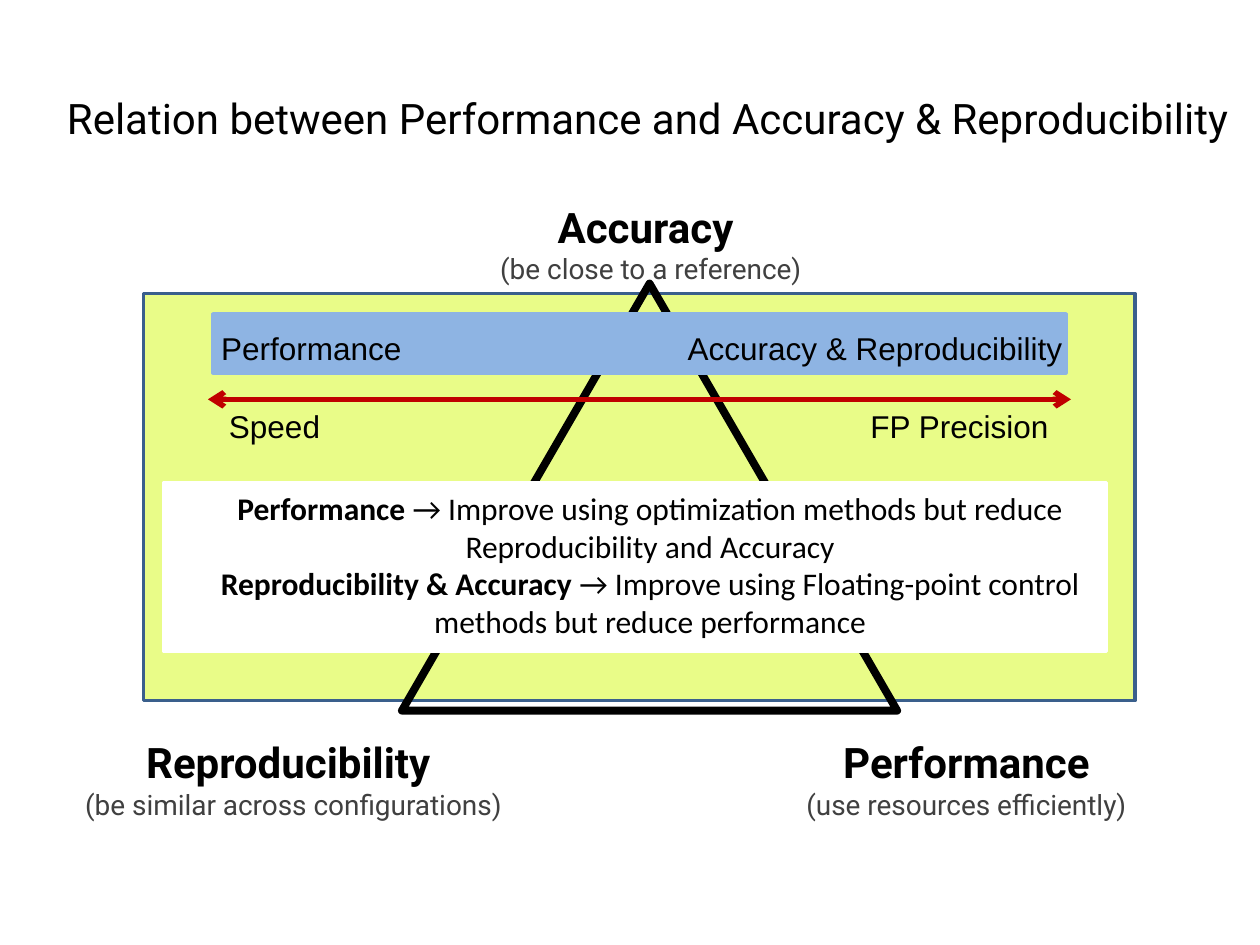
from lxml.etree import SubElement
from pptx import Presentation
from pptx.dml.color import RGBColor
from pptx.enum.shapes import MSO_CONNECTOR as Connector, MSO_SHAPE as Shape
from pptx.enum.text import MSO_ANCHOR as Anchor, PP_ALIGN as Align
from pptx.oxml.ns import qn
from pptx.util import Pt

COLORS = {"ink": "000000", "note": "404040", "white": "FFFFFF", "lime": "E9FC88",
          "frame": "3A5F8C", "bar": "8EB4E3", "arrow": "C00000"}

TITLE = "Relation between Performance and Accuracy & Reproducibility"
CORNERS = [
    ("Accuracy ", "(be close to a reference)", (259.9, 111.6, 223.9, 54.7)),
    ("Reproducibility ", "(be similar across configurations)", (3.6, 417.6, 328.3, 54.7)),
    ("Performance", "(use resources efficiently)", (388.1, 417.6, 328.3, 76.3)),
]
SCALE_ENDS = [("FP Precision", (490.3, 229, 120, 28.8)),
              ("Speed", (123.8, 229, 72, 28.8))]
TRADEOFFS = [
    [("Performance", True),
     (" → Improve using optimization methods but reduce Reproducibility and Accuracy", False)],
    [("Reproducibility & Accuracy ", True),
     ("→ Improve using Floating-point control methods but reduce performance", False)],
]
BAR_LABELS = "Performance\tAccuracy & Reproducibility"
BACKDROPS = [
    (Shape.RECTANGLE, (82.1, 167.8, 566.6, 232.6), "lime", "frame", 2),
    (Shape.ISOSCELES_TRIANGLE, (229.7, 162, 283, 244.1), None, "ink", 4.5),
    (Shape.RECTANGLE, (93.6, 275.8, 538.6, 96.5), "white", "white", 2),
]
BAR = (Shape.RECTANGLE, (121.7, 179.3, 487.4, 33.8), "bar", "bar", 2)


def rgb(name):
    return RGBColor.from_string(COLORS[name])


def add_panel(slide, kind, box, fill, outline, width):
    panel = slide.shapes.add_shape(kind, *map(Pt, box))
    panel.shadow.inherit = False
    if fill:
        panel.fill.solid()
        panel.fill.fore_color.rgb = rgb(fill)
    else:
        panel.fill.background()
    panel.line.color.rgb = rgb(outline)
    panel.line.width = Pt(width)


def write(frame, paragraphs, *, font, size=18, align=Align.LEFT, wrap=True):
    """Fill a text frame with paragraphs of (text, bold[, size, color]) runs."""
    frame.word_wrap = wrap
    frame.vertical_anchor = Anchor.TOP
    for index, runs in enumerate(paragraphs):
        paragraph = frame.add_paragraph() if index else frame.paragraphs[0]
        paragraph.alignment = align
        for text, bold, *look in runs:
            run = paragraph.add_run()
            run.text = text
            run_size, color = look or (size, "ink")
            run.font.name, run.font.size, run.font.bold = font, Pt(run_size), bold
            run.font.color.rgb = rgb(color)


def add_label(slide, box, paragraphs, **style):
    frame = slide.shapes.add_textbox(*map(Pt, box)).text_frame
    write(frame, paragraphs, **style)
    return frame


def add_scale_arrow(slide):
    arrow = slide.shapes.add_connector(Connector.STRAIGHT, *map(Pt, (118.8, 228.2, 612, 228.2)))
    arrow.line.color.rgb = rgb("arrow")
    arrow.line.width = Pt(3)
    properties = arrow._element.spPr
    for end in ("a:headEnd", "a:tailEnd"):
        SubElement(properties.find(qn("a:ln")), qn(end), type="arrow")
    SubElement(properties, qn("a:effectLst"))


def add_bar_labels(slide):
    frame = add_label(slide, (99.4, 184.3, 527, 34.6), [[(BAR_LABELS, False)]], font="Arial")
    frame.margin_left = Pt(27)
    tabs = SubElement(frame.paragraphs[0]._p.get_or_add_pPr(), qn("a:tabLst"))
    SubElement(tabs, qn("a:tab"), pos=str(Pt(480.6)), algn="r")


def main():
    deck = Presentation()
    deck.slide_width, deck.slide_height = Pt(720), Pt(540)
    slide = deck.slides.add_slide(deck.slide_layouts[5])

    title = slide.shapes.title
    title.left, title.top, title.width, title.height = map(Pt, (20.2, 49, 699.8, 38.2))
    write(title.text_frame, [[(TITLE, False)]], font="Roboto", size=24, align=Align.CENTER)

    for backdrop in BACKDROPS:
        add_panel(slide, *backdrop)
    for goal, meaning, box in CORNERS:
        add_label(slide, box, [[(goal, True, 24, "ink")], [(meaning, False, 16, "note")]],
                  font="Roboto", align=Align.CENTER)
    for end, box in SCALE_ENDS:
        add_label(slide, box, [[(end, False)]], font="Arial")
    add_scale_arrow(slide)
    add_label(slide, (99.4, 275.8, 544.3, 115.2), TRADEOFFS, font="Calibri", align=Align.CENTER)
    add_panel(slide, *BAR)
    add_bar_labels(slide)
    deck.save("out.pptx")


if __name__ == "__main__":
    main()
